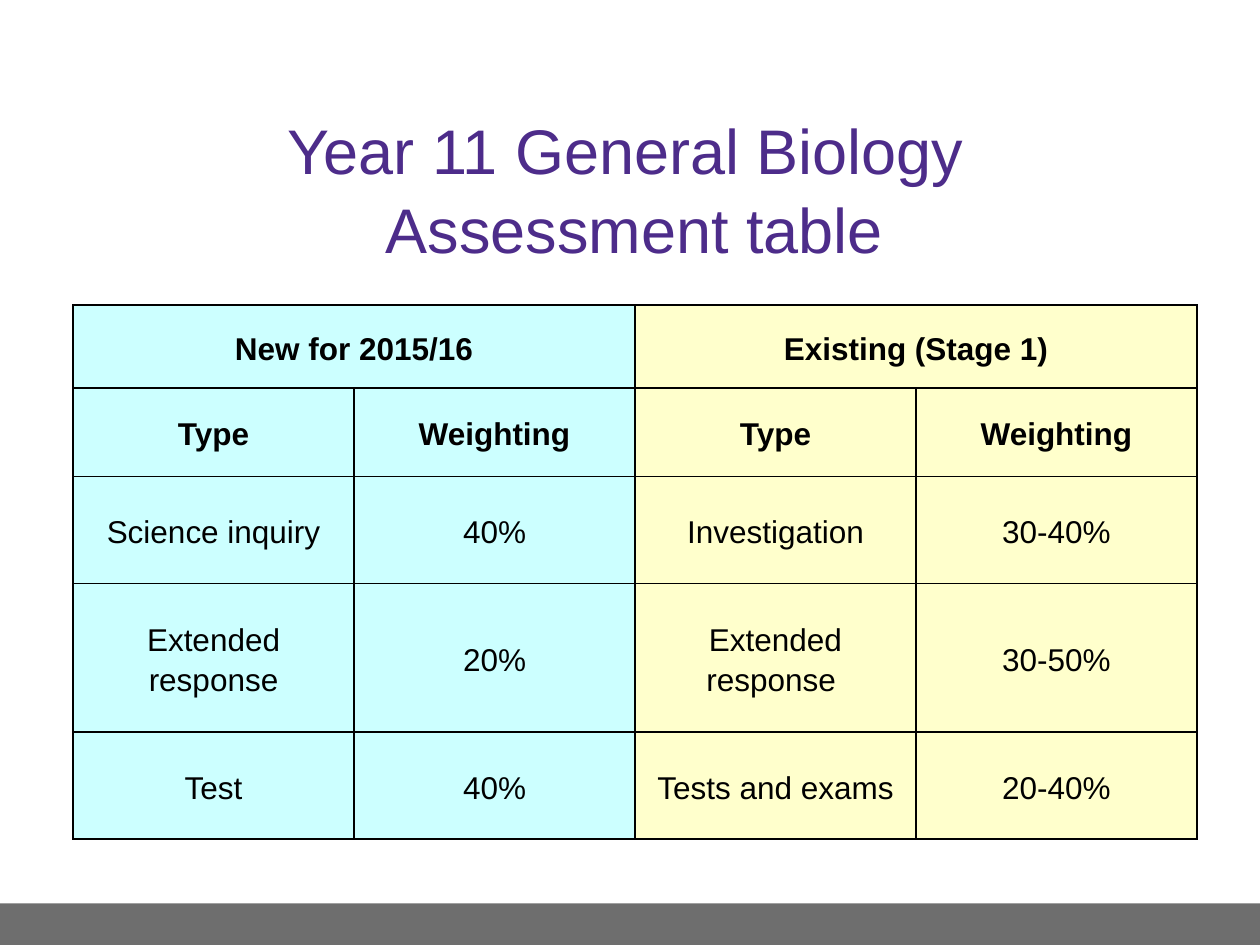
from typing import NamedTuple

from lxml import etree
from pptx import Presentation
from pptx.dml.color import RGBColor
from pptx.enum.shapes import MSO_SHAPE
from pptx.enum.text import MSO_ANCHOR, PP_ALIGN
from pptx.oxml.ns import qn
from pptx.util import Inches, Pt

RECTANGLE = MSO_SHAPE.RECTANGLE
MIDDLE = MSO_ANCHOR.MIDDLE
CENTER = PP_ALIGN.CENTER

BLACK = "000000"
PURPLE = "4D2C8A"
GREY = "6E6E6E"
BORDER_SIDES = ("a:lnL", "a:lnR", "a:lnT", "a:lnB")
COLUMN_WIDTH = 2.23
ROW_HEIGHTS = (0.66, 0.7, 0.85, 1.18, 0.85)
HEADING_ROWS = 2


class Scheme(NamedTuple):
    heading: str
    fill: str
    weightings: tuple


SCHEMES = (
    Scheme("New for 2015/16", "CCFFFF", (
        ("Science inquiry", "40%"),
        ("Extended response", "20%"),
        ("Test", "40%"),
    )),
    Scheme("Existing (Stage 1)", "FFFFCC", (
        ("Investigation", "30-40%"),
        ("Extended response ", "30-50%"),
        ("Tests and exams", "20-40%"),
    )),
)


def rgb(value: str) -> RGBColor:
    return RGBColor.from_string(value)


def format_para(para, size: float, color: str, spacing: float, bold: bool = False) -> None:
    para.alignment = CENTER
    para.line_spacing = spacing
    font_format = {"name": "Arial", "size": Pt(size), "bold": bold}
    for name, value in font_format.items():
        setattr(para.font, name, value)
    para.font.color.rgb = rgb(color)


def add_footer_bar(page) -> None:
    bar = page.shapes.add_shape(RECTANGLE, 0, Inches(7.17), Inches(10), Inches(0.33))
    bar.shadow.inherit = False
    bar.fill.solid()
    bar.fill.fore_color.rgb = rgb(GREY)
    bar.line.fill.background()


def add_title(page) -> None:
    box = page.shapes.add_textbox(Inches(0.36), Inches(0.92), Inches(9.35), Inches(1.08))
    frame = box.text_frame
    frame_format = {"word_wrap": True, "vertical_anchor": MIDDLE, "margin_top": Inches(0.1)}
    for name, value in frame_format.items():
        setattr(frame, name, value)
    para = frame.paragraphs[0]
    para.text = "Year 11 General Biology \vAssessment table"
    format_para(para, 36, PURPLE, 1.05)


def add_borders(cell) -> None:
    """Draw a thin black line on each side, ahead of the cell's fill in the XML."""
    properties = cell._tc.get_or_add_tcPr()
    for position, side in enumerate(BORDER_SIDES):
        line = etree.Element(qn(side), w=str(Pt(1)))
        fill = etree.SubElement(line, qn("a:solidFill"))
        etree.SubElement(fill, qn("a:srgbClr"), val=BLACK)
        properties.insert(position, line)


def format_cell(cell, fill: str, bold: bool) -> None:
    cell_format = {
        "vertical_anchor": MIDDLE,
        "margin_left": Inches(0.07),
        "margin_right": Inches(0.07),
        "margin_top": 0,
        "margin_bottom": 0,
    }
    for name, value in cell_format.items():
        setattr(cell, name, value)
    cell.fill.solid()
    cell.fill.fore_color.rgb = rgb(fill)
    add_borders(cell)
    format_para(cell.text_frame.paragraphs[0], 18, BLACK, 1.15, bold)


def add_assessment_table(page) -> None:
    column_count = 2 * len(SCHEMES)
    table = page.shapes.add_table(
        len(ROW_HEIGHTS), column_count, Inches(0.58), Inches(2.42),
        Inches(COLUMN_WIDTH * column_count), Inches(sum(ROW_HEIGHTS)),
    ).table
    for column in table.columns:
        column.width = Inches(COLUMN_WIDTH)
    for row, height in zip(table.rows, ROW_HEIGHTS):
        row.height = Inches(height)

    for index, scheme in enumerate(SCHEMES):
        first = 2 * index
        rows = ((scheme.heading, ""), ("Type", "Weighting"), *scheme.weightings)
        for row_index, texts in enumerate(rows):
            for offset, text in enumerate(texts):
                cell = table.cell(row_index, first + offset)
                cell.text = text
                format_cell(cell, scheme.fill, row_index < HEADING_ROWS)
        table.cell(0, first).merge(table.cell(0, first + 1))


def main() -> None:
    deck = Presentation()
    deck.slide_width, deck.slide_height = Inches(10), Inches(7.5)
    page = deck.slides.add_slide(deck.slide_layouts[6])
    add_footer_bar(page)
    add_title(page)
    add_assessment_table(page)
    deck.save("out.pptx")


if __name__ == "__main__":
    main()
